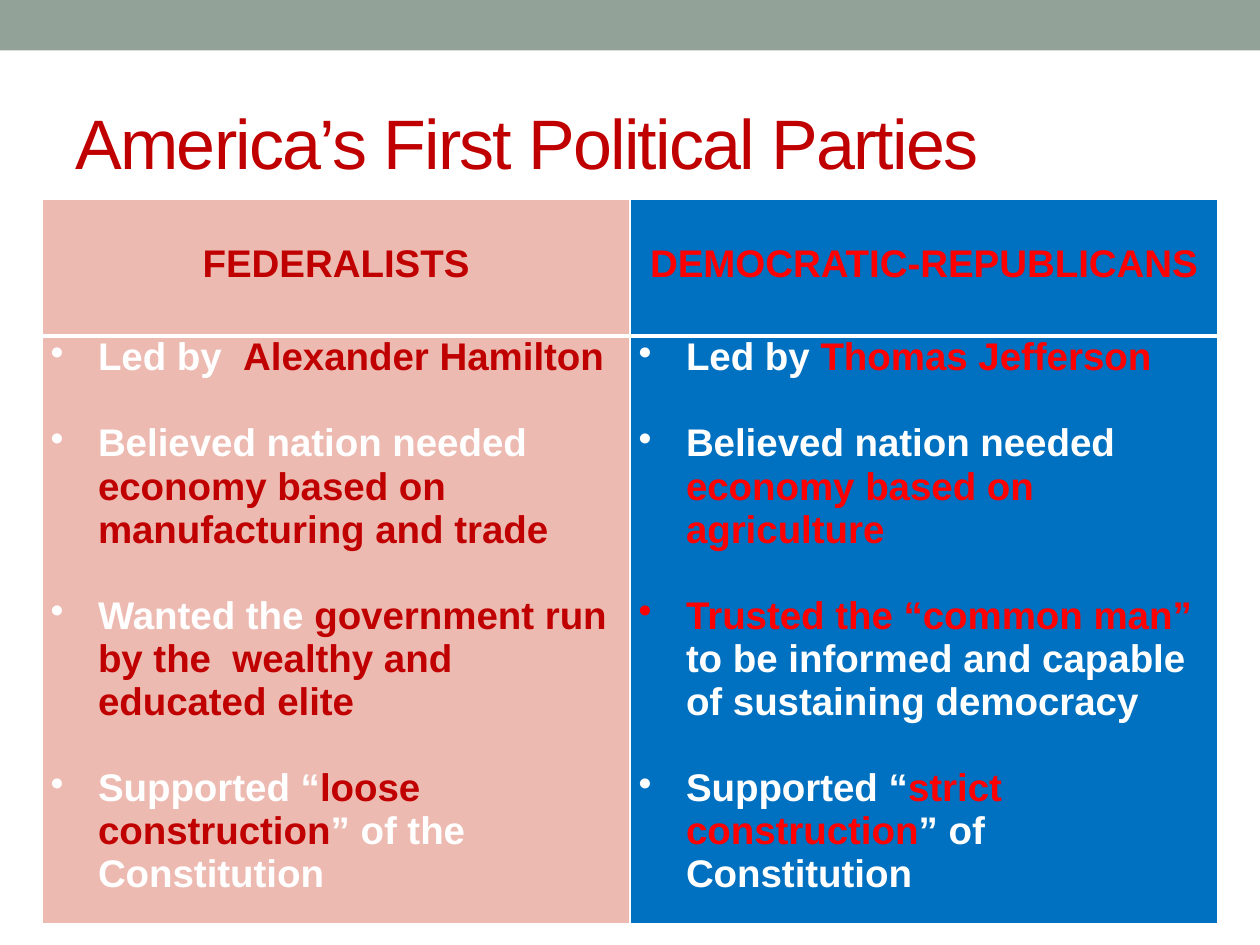
"""Build a slide comparing America's first two political parties."""
from dataclasses import dataclass

from lxml.etree import SubElement
from pptx import Presentation
from pptx.dml.color import RGBColor
from pptx.enum.shapes import MSO_SHAPE
from pptx.enum.text import MSO_ANCHOR, PP_ALIGN
from pptx.oxml import parse_xml
from pptx.oxml.ns import nsdecls, qn
from pptx.util import Pt


@dataclass(frozen=True)
class Theme:
    font: str = "Arial"
    title_size: float = 40
    body_size: float = 22
    line_height: float = 24.6
    band: str = "93A299"
    title: str = "C00000"
    text: str = "FFFFFF"
    border: str = "FFFFFF"


theme = Theme()

parties = [
    {
        "name": "FEDERALISTS",
        "fill": "EDBAB1",
        "accent": "C00000",
        "points": [
            [("Led by  ", False), ("Alexander Hamilton", True)],
            [("Believed nation needed ", False),
             ("economy based on manufacturing and trade", True)],
            [("Wanted the ", False),
             ("government run by the  wealthy and educated elite", True)],
            [("Supported “", False), ("loose construction", True),
             ("” of the Constitution", False)],
        ],
    },
    {
        "name": "DEMOCRATIC-REPUBLICANS",
        "fill": "0070C0",
        "accent": "FF0000",
        "points": [
            [("Led by ", False), ("Thomas Jefferson", True)],
            [("Believed nation needed ", False),
             ("economy based on agriculture", True)],
            [("Trusted the “common man” ", True),
             ("to be informed and capable of sustaining democracy", False)],
            [("Supported “", False), ("strict construction", True),
             ("” of Constitution", False)],
        ],
    },
]


def style_cell(cell, fill, top, bottom):
    cell.fill.solid()
    cell.fill.fore_color.rgb = RGBColor.from_string(fill)
    cell.margin_left = cell.margin_right = Pt(5)
    cell.margin_top = cell.margin_bottom = Pt(0)
    cell.vertical_anchor = MSO_ANCHOR.TOP
    properties = cell._tc.get_or_add_tcPr()
    edges = [("lnL", 1), ("lnR", 1), ("lnT", top), ("lnB", bottom)]
    for position, (edge, width) in enumerate(edges):
        properties.insert(position, parse_xml(
            f'<a:{edge} {nsdecls("a")} w="{Pt(width)}"><a:solidFill>'
            f'<a:srgbClr val="{theme.border}"/></a:solidFill></a:{edge}>'))


def style_font(font, size, bold):
    font.name = theme.font
    font.size = Pt(size)
    font.bold = bold


deck = Presentation()
deck.slide_width, deck.slide_height = Pt(720), Pt(540)
page = deck.slides.add_slide(deck.slide_layouts[5])

band = page.shapes.add_shape(MSO_SHAPE.RECTANGLE, Pt(0), Pt(0), Pt(720), Pt(28.8))
band.shadow.inherit = False
band.fill.solid()
band.fill.fore_color.rgb = RGBColor.from_string(theme.band)
band.line.fill.background()

title = page.shapes.title
title.left, title.top, title.width, title.height = Pt(36), Pt(42), Pt(648), Pt(78)
title.text_frame.vertical_anchor = MSO_ANCHOR.MIDDLE
para = title.text_frame.paragraphs[0]
para.alignment = PP_ALIGN.LEFT
style_font(para.font, theme.title_size, False)
para.font.color.rgb = RGBColor.from_string(theme.title)
span = para.add_run()
span.text = "America’s First Political Parties"
span._r.get_or_add_rPr().set("spc", "-100")

table = page.shapes.add_table(2, 2, Pt(24), Pt(114), Pt(672), Pt(414)).table
table.rows[0].height, table.rows[1].height = Pt(78), Pt(336)

for column, party in enumerate(parties):
    table.columns[column].width = Pt(336)
    accent = RGBColor.from_string(party["accent"])

    heading = table.cell(0, column)
    style_cell(heading, party["fill"], top=1, bottom=3)
    heading.margin_top = Pt(theme.line_height)
    para = heading.text_frame.paragraphs[0]
    para.alignment = PP_ALIGN.CENTER
    style_font(para.font, theme.body_size, True)
    para.font.color.rgb = accent
    para.add_run().text = party["name"]

    body = table.cell(1, column)
    style_cell(body, party["fill"], top=3, bottom=1)
    for index, point in enumerate(party["points"]):
        frame = body.text_frame
        para = frame.add_paragraph() if index else frame.paragraphs[0]
        para.space_before = Pt(theme.line_height if index else 0)
        style_font(para.font, theme.body_size, True)
        properties = para._p.get_or_add_pPr()
        properties.set("marL", str(Pt(27)))
        properties.set("indent", str(Pt(-27)))
        bullet = SubElement(properties, qn("a:buChar"), char="•")
        properties.find(qn("a:defRPr")).addprevious(bullet)
        for text, emphasised in point:
            span = para.add_run()
            span.text = text
            span.font.color.rgb = (
                accent if emphasised else RGBColor.from_string(theme.text))

deck.save("out.pptx")
